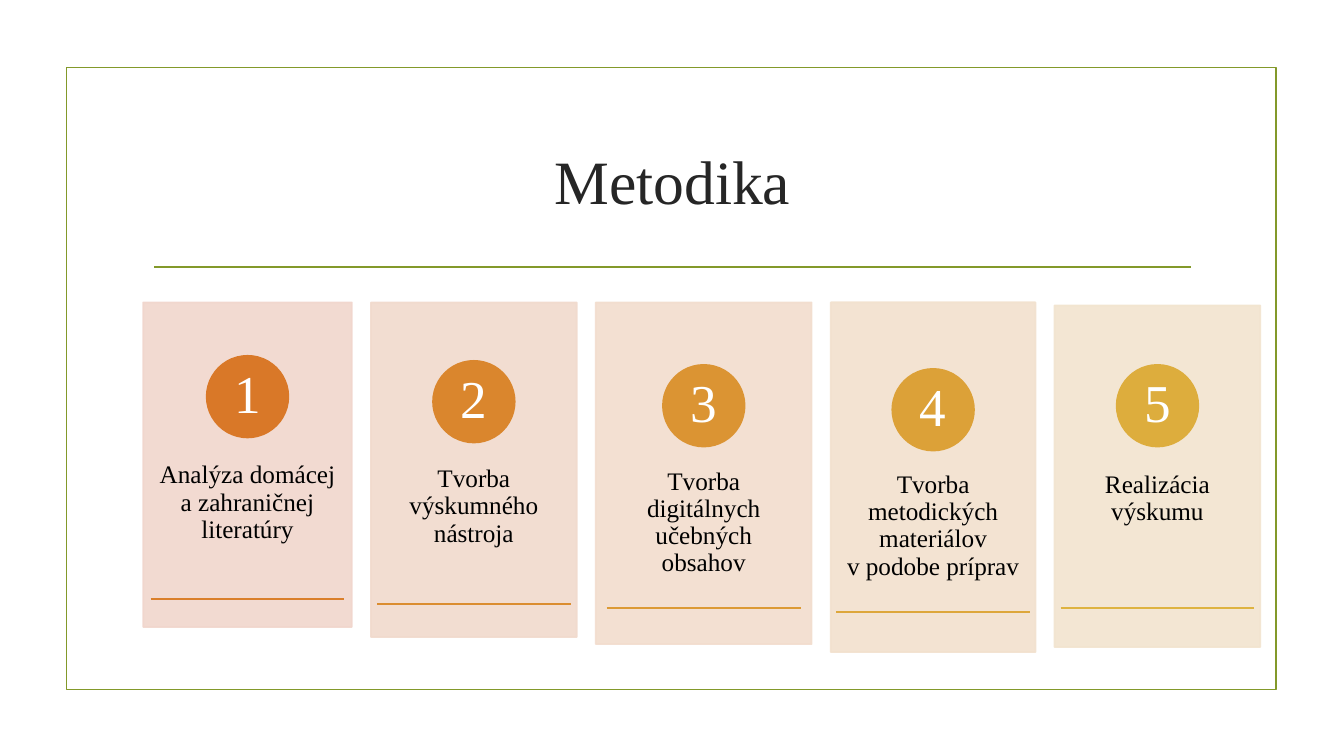
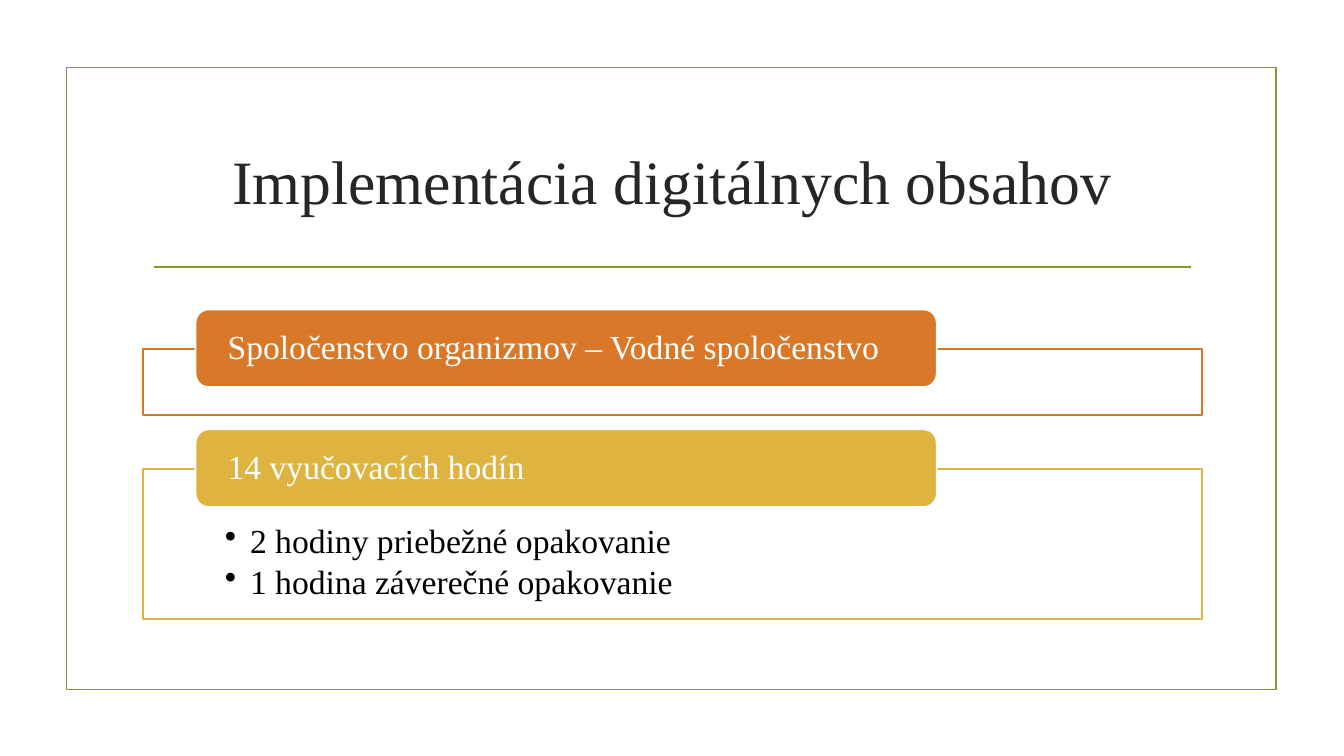
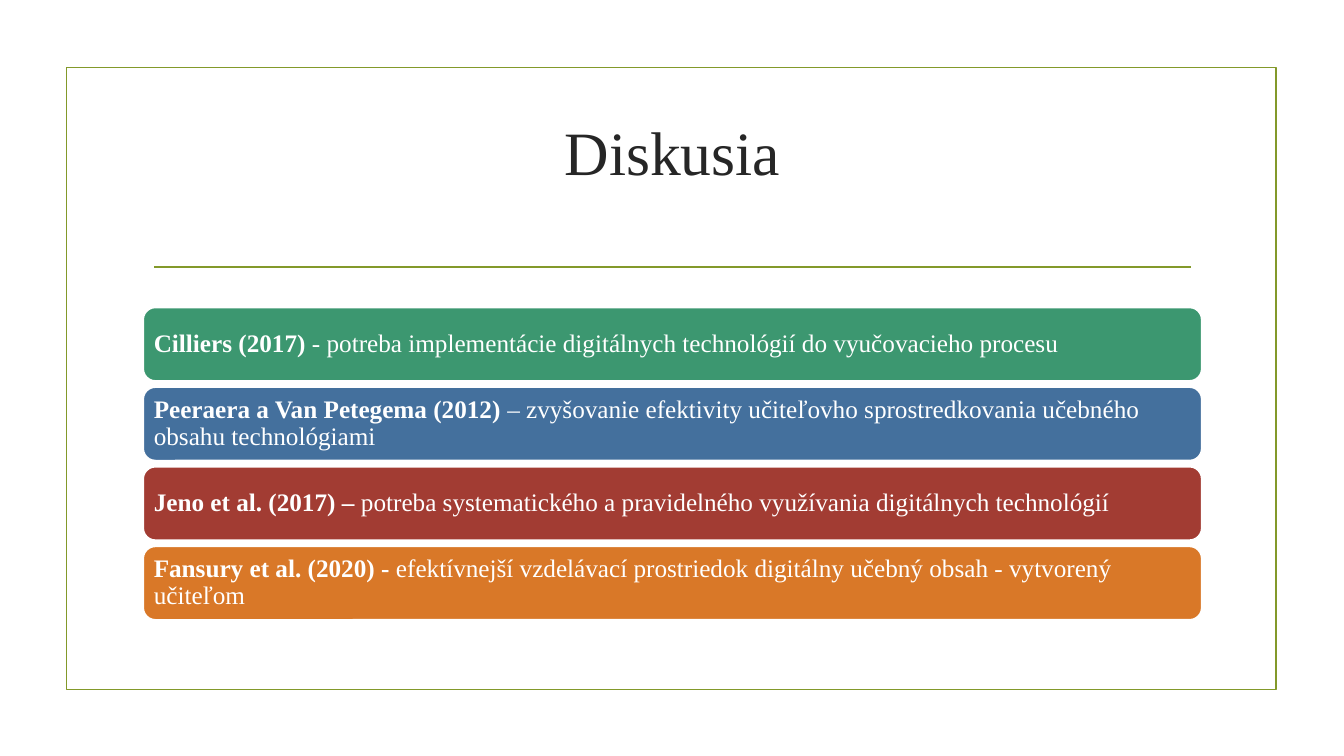
"""Build three framed slides on method, implementation and discussion."""
import dataclasses

import lxml.etree
import pptx
import pptx.dml.color
import pptx.enum.shapes
import pptx.enum.text
import pptx.oxml.ns
import pptx.util

Inches = pptx.util.Inches
Pt = pptx.util.Pt
RGBColor = pptx.dml.color.RGBColor
Shape = pptx.enum.shapes.MSO_SHAPE
Align = pptx.enum.text.PP_ALIGN
Anchor = pptx.enum.text.MSO_ANCHOR
qn = pptx.oxml.ns.qn


@dataclasses.dataclass(frozen=True)
class Theme:
    font: str = "Times New Roman"
    olive: str = "83992A"
    title: str = "262626"
    black: str = "000000"
    white: str = "FFFFFF"
    orange: str = "D97828"
    gold: str = "DEB340"
    green: str = "3C9770"
    blue: str = "44709D"
    red: str = "A23C33"
    title_size: float = 44
    number_size: float = 38
    large_size: float = 24
    body_size: float = 18
    line_width: float = 1.25


theme = Theme()


def add_box(slide, kind, left, top, width, height, fill, line):
    """Add a preset shape with a solid or empty fill and a thin outline."""
    shape = slide.shapes.add_shape(kind, Inches(left), Inches(top), Inches(width), Inches(height))
    shape.shadow.inherit = False
    if fill:
        shape.fill.solid()
        shape.fill.fore_color.rgb = RGBColor.from_string(fill)
    else:
        shape.fill.background()
    shape.line.color.rgb = RGBColor.from_string(line)
    shape.line.width = Pt(theme.line_width)
    return shape


def write_text(shape, paragraphs, size, color, alignment, anchor, insets, spacing=0.9):
    """Write paragraphs, each a list of runs, in one style."""
    frame = shape.text_frame
    frame.word_wrap = True
    frame.vertical_anchor = anchor
    frame.margin_left, frame.margin_top, frame.margin_right, frame.margin_bottom = map(Inches, insets)
    for index, runs in enumerate(paragraphs):
        paragraph = frame.add_paragraph() if index else frame.paragraphs[0]
        for position, text in enumerate(runs):
            if position:
                paragraph.add_line_break() if text.startswith("\n") else None
            paragraph.add_run().text = text.lstrip("\n")
        paragraph.alignment = alignment
        paragraph.line_spacing = spacing
        paragraph.font.name = theme.font
        paragraph.font.size = Pt(size)
        paragraph.font.color.rgb = RGBColor.from_string(color)
    return frame.paragraphs


presentation = pptx.Presentation()
presentation.slide_width = Inches(13.33)
presentation.slide_height = Inches(7.5)

content_left, content_width = 1.42, 10.5
slides = []
rules = []
for title, title_height in (
    ("Metodika", 1.43),
    ("Implementácia digitálnych obsahov", 1.43),
    ("Diskusia", 0.86),
):
    slide = presentation.slides.add_slide(presentation.slide_layouts[6])
    add_box(slide, Shape.RECTANGLE, 0.66, 0.67, 12, 6.17, None, theme.olive)
    title_box = slide.shapes.add_textbox(
        Inches(content_left), Inches(1.07), Inches(content_width), Inches(title_height))
    write_text(title_box, [[title]], theme.title_size, theme.title, Align.CENTER, Anchor.MIDDLE,
               (0.1, 0.05, 0.1, 0.05), 1.0)
    slides.append(slide)
    rules.append((slide, 1.53, 11.81, 2.65, theme.olive))
method_slide, implementation_slide, discussion_slide = slides

steps = [
    (["Analýza domácej a zahraničnej literatúry"], 3, 2.07, 3.22, 3.53, "F1D6CD", theme.orange, "DA7F2B"),
    (["Tvorba výskumného nástroja"], 3, 2.04, 3.32, 3.58, "F1DACD", "DA862D", "DB8D30"),
    (["Tvorba digitálnych učebných obsahov"], 3, 2.14, 3.39, 3.62, "F2DDCE", "DB9433", "DC9A35"),
    (["Tvorba metodických materiálov", "\nv podobe príprav"], 3, 2.03, 3.47, 3.66, "F2E1CE", "DCA138", "DDA73B"),
    (["Realizácia výskumu"], 3.03, 2.04, 3.39, 3.62, "F2E4CF", "DDAD3D", theme.gold),
]
card_gap, circle_size, rule_width = 0.19, 0.81, 1.92
card_left = content_left
for number, (runs, top, width, height, circle_top, fill, circle_color, rule_color) in enumerate(steps, 1):
    card = add_box(method_slide, Shape.RECTANGLE, card_left, top, width, height, fill, fill)
    for color in card._element.spPr.iter(qn("a:srgbClr")):
        lxml.etree.SubElement(color, qn("a:alpha"), val="90000")
    write_text(card, [runs], theme.body_size, theme.black, Align.CENTER, Anchor.TOP,
               (0.15, 0.38 * height + 0.36, 0.15, 0.1))
    center = card_left + width / 2
    circle = add_box(method_slide, Shape.OVAL, center - circle_size / 2, circle_top,
                     circle_size, circle_size, circle_color, circle_color)
    write_text(circle, [[str(number)]], theme.number_size, theme.white, Align.CENTER, Anchor.MIDDLE,
               (0.06, 0.01, 0.06, 0.01))
    rules.append((method_slide, center - rule_width / 2, center + rule_width / 2,
                  circle_top + 2.41, rule_color))
    card_left += width + card_gap

topics = [
    ("Spoločenstvo organizmov – Vodné spoločenstvo", theme.orange, 0.66, []),
    ("14 vyučovacích hodín", theme.gold, 1.49,
     [["2 hodiny priebežné opakovanie"], ["1 hodina záverečné opakovanie"]]),
]
for index, (heading, color, panel_height, details) in enumerate(topics):
    heading_top = 3.07 + 1.19 * index
    panel = add_box(implementation_slide, Shape.RECTANGLE, content_left, heading_top + 0.39,
                    content_width, panel_height, theme.white, color)
    if details:
        for paragraph in write_text(panel, details, theme.large_size, theme.black, Align.LEFT,
                                    Anchor.TOP, (0.81, 0.55, 0.81, 0.19)):
            paragraph.space_after = Pt(3.6)
            properties = paragraph._p.get_or_add_pPr()
            properties.set("marL", str(Inches(0.25)))
            properties.set("indent", str(Inches(-0.25)))
            bullet = lxml.etree.Element(qn("a:buChar"), char="•")
            properties.find(qn("a:defRPr")).addprevious(bullet)
    bar = add_box(implementation_slide, Shape.ROUNDED_RECTANGLE, 1.94, heading_top, 7.35, 0.77,
                  color, theme.white)
    write_text(bar, [[heading]], theme.large_size, theme.white, Align.LEFT, Anchor.MIDDLE,
               (0.28, 0, 0.28, 0))

findings = [
    ("Cilliers (2017) ", "- potreba implementácie digitálnych technológií do vyučovacieho procesu", theme.green),
    ("Peeraera a Van Petegema (2012) ",
     "– zvyšovanie efektivity učiteľovho sprostredkovania učebného obsahu technológiami", theme.blue),
    ("Jeno et al. (2017) – ",
     "potreba systematického a pravidelného využívania digitálnych technológií", theme.red),
    ("Fansury et al. (2020) - ",
     "efektívnejší vzdelávací prostriedok digitálny učebný obsah - vytvorený učiteľom", theme.orange),
]
for index, (source, finding, color) in enumerate(findings):
    bar = add_box(discussion_slide, Shape.ROUNDED_RECTANGLE, content_left, 3.05 + 0.79 * index,
                  content_width, 0.73, color, theme.white)
    paragraphs = write_text(bar, [[source, finding]], theme.body_size, theme.white, Align.LEFT,
                            Anchor.MIDDLE, (0.07, 0.07, 0.07, 0.07))
    paragraphs[0].runs[0].font.bold = True

for slide, left, right, height, color in rules:
    rule = slide.shapes.add_connector(
        pptx.enum.shapes.MSO_CONNECTOR.STRAIGHT, Inches(left), Inches(height), Inches(right), Inches(height))
    rule.line.color.rgb = RGBColor.from_string(color)
    rule.line.width = Pt(theme.line_width)
    lxml.etree.SubElement(rule._element.spPr, qn("a:effectLst"))

presentation.save("out.pptx")
